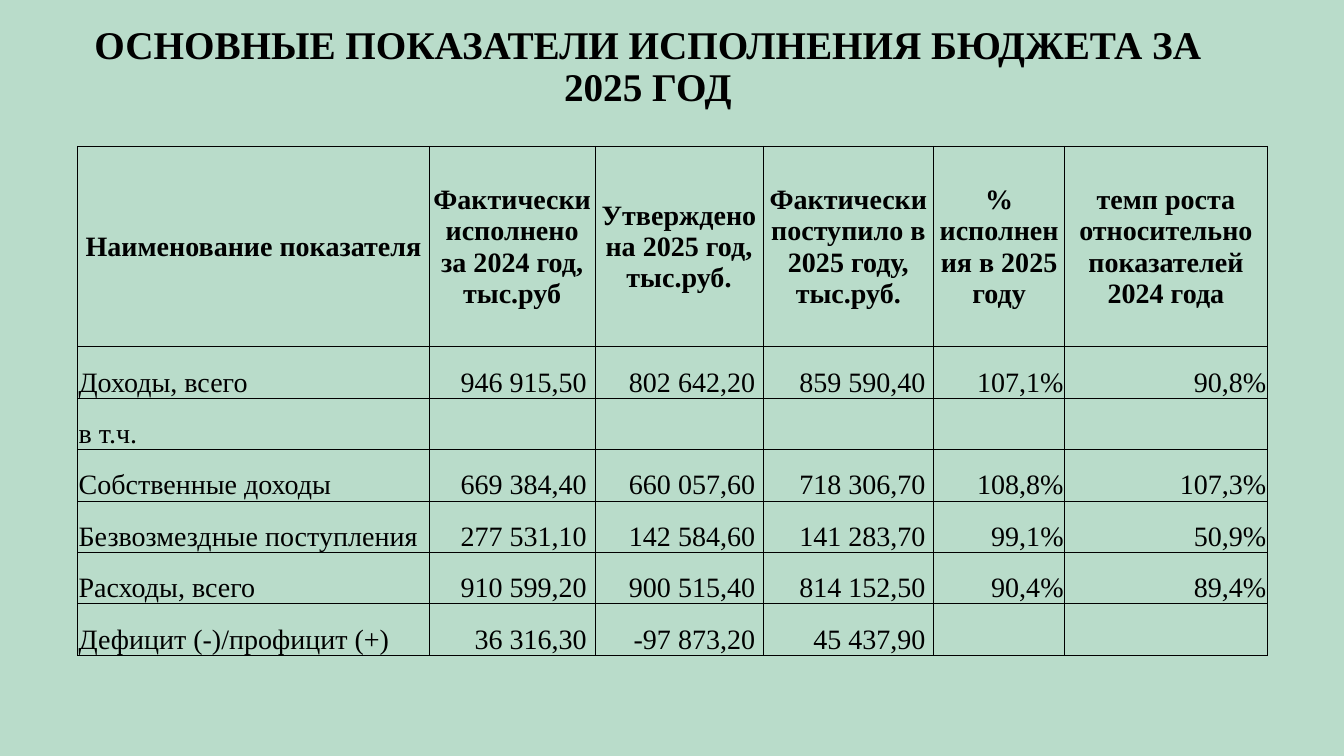
from lxml.etree import SubElement
from pptx import Presentation
from pptx.dml.color import RGBColor
from pptx.enum.text import MSO_ANCHOR, PP_ALIGN
from pptx.oxml.ns import qn
from pptx.util import Inches, Pt

FONT = "Times New Roman"
BACKGROUND = "B9DCCA"
BLACK = "000000"

TITLE = "ОСНОВНЫЕ ПОКАЗАТЕЛИ ИСПОЛНЕНИЯ БЮДЖЕТА ЗА 2025 ГОД"
HEADERS = (
    "Наименование показателя",
    "Фактически исполнено за 2024 год, тыс.руб",
    "Утверждено на 2025 год, тыс.руб.",
    "Фактически поступило в 2025 году, тыс.руб.",
    "% исполнения в 2025 году",
    "темп роста относительно показателей 2024 года",
)
INDICATORS = [
    ("Доходы, всего", "946 915,50 ", "802 642,20 ", "859 590,40 ", "107,1%", "90,8%"),
    ("в т.ч.", "", "", "", "", ""),
    ("Собственные доходы", "669 384,40 ", "660 057,60 ", "718 306,70 ", "108,8%", "107,3%"),
    ("Безвозмездные поступления", "277 531,10 ", "142 584,60 ", "141 283,70 ", "99,1%", "50,9%"),
    ("Расходы, всего", "910 599,20 ", "900 515,40 ", "814 152,50 ", "90,4%", "89,4%"),
    ("Дефицит (-)/профицит (+)", "36 316,30 ", "-97 873,20 ", "45 437,90 ", "", ""),
]
LEFT, TABLE_TOP = 0.77, 1.45
COLUMN_WIDTHS = (3.49, 1.64, 1.67, 1.69, 1.3, 2.01)
HEADER_HEIGHT, ROW_HEIGHT = 1.99, 0.51


def color(hex_string):
    return RGBColor.from_string(hex_string)


def format_paragraph(paragraph, size, bold, alignment):
    paragraph.alignment = alignment
    for font in [paragraph.font] + [run.font for run in paragraph.runs]:
        font.name = FONT
        font.size = Pt(size)
        font.bold = bold
        font.color.rgb = color(BLACK)


def add_borders(cell):
    properties = cell._tc.get_or_add_tcPr()
    for side in ("a:lnL", "a:lnR", "a:lnT", "a:lnB"):
        line = SubElement(properties, qn(side), w=str(Pt(0.5)))
        fill = SubElement(line, qn("a:solidFill"))
        SubElement(fill, qn("a:srgbClr"), val=BLACK)


def fill_cell(cell, text, is_header, is_name):
    cell.text_frame.text = text
    cell.margin_left = cell.margin_right = cell.margin_top = Inches(0.01)
    cell.margin_bottom = 0
    cell.vertical_anchor = MSO_ANCHOR.MIDDLE if is_header else MSO_ANCHOR.BOTTOM
    if is_header:
        alignment = PP_ALIGN.CENTER
    else:
        alignment = PP_ALIGN.LEFT if is_name else PP_ALIGN.RIGHT
    format_paragraph(cell.text_frame.paragraphs[0], 20, is_header, alignment)
    add_borders(cell)
    cell.fill.background()


def add_title(slide):
    title = slide.shapes.title
    title.left, title.top = Inches(LEFT), Inches(0.2)
    title.width, title.height = Inches(11.31), Inches(0.95)
    title.text_frame.text = TITLE
    title.text_frame.word_wrap = True
    title.text_frame.vertical_anchor = MSO_ANCHOR.MIDDLE
    paragraph = title.text_frame.paragraphs[0]
    paragraph.line_spacing = 0.9
    format_paragraph(paragraph, 28, True, PP_ALIGN.CENTER)


def add_budget_table(slide):
    rows = [HEADERS] + INDICATORS
    heights = [HEADER_HEIGHT] + [ROW_HEIGHT] * len(INDICATORS)
    table = slide.shapes.add_table(
        len(rows), len(HEADERS), Inches(LEFT), Inches(TABLE_TOP),
        Inches(sum(COLUMN_WIDTHS)), Inches(sum(heights)),
    ).table
    table.first_row = table.horz_banding = False
    for column, width in zip(table.columns, COLUMN_WIDTHS):
        column.width = Inches(width)
    for row_index, (texts, height) in enumerate(zip(rows, heights)):
        table.rows[row_index].height = Inches(height)
        for column_index, text in enumerate(texts):
            fill_cell(table.cell(row_index, column_index), text,
                      row_index == 0, column_index == 0)


def main():
    presentation = Presentation()
    presentation.slide_width = Inches(13.33)
    presentation.slide_height = Inches(7.5)
    slide = presentation.slides.add_slide(presentation.slide_layouts[5])
    slide.background.fill.solid()
    slide.background.fill.fore_color.rgb = color(BACKGROUND)
    add_title(slide)
    add_budget_table(slide)
    presentation.save("out.pptx")


if __name__ == "__main__":
    main()
